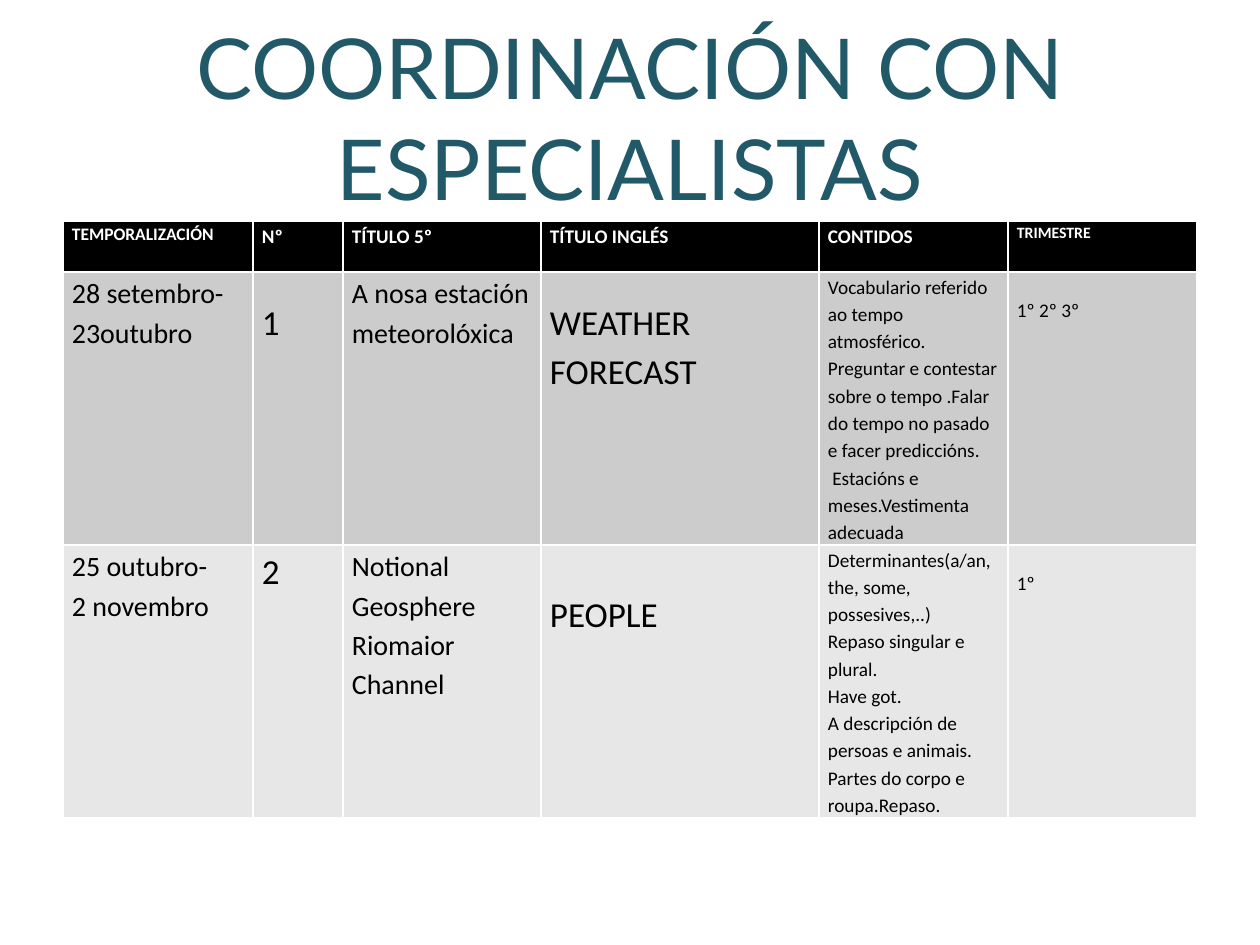
"""Build the slide on coordination with specialist teachers."""
from pptx import Presentation
from pptx.dml.color import RGBColor
from pptx.enum.text import MSO_ANCHOR, MSO_AUTO_SIZE, PP_ALIGN
from pptx.util import Emu, Pt

MIDDLE = MSO_ANCHOR.MIDDLE
FIXED = MSO_AUTO_SIZE.NONE
LEFT, CENTER = PP_ALIGN.LEFT, PP_ALIGN.CENTER
COLORS = {"title": "215968", "head": "000000", "white": "FFFFFF",
          "ink": "000000", "dark": "CCCCCC", "light": "E7E7E7"}


def px(n):
    return Emu(round(n * 914400 / 126))


def write(frame, text, size=11, color="ink", font="Calibri", bold=False,
          align=LEFT, space=1.15):
    for i, line in enumerate(text.split("\n")):
        para = frame.paragraphs[0] if i == 0 else frame.add_paragraph()
        para.alignment = align
        para.line_spacing = space
        run = para.add_run()
        run.text = line
        run.font.size = Pt(size)
        run.font.name = font
        run.font.bold = bold
        run.font.color.rgb = RGBColor.from_string(COLORS[color])


deck = Presentation()
deck.slide_width, deck.slide_height = px(1260), px(945)
slide = deck.slides.add_slide(deck.slide_layouts[5])

title = slide.shapes.title
title.left, title.top, title.width, title.height = px(63), px(38), px(1134), px(157)
frame = title.text_frame
frame.word_wrap = True
frame.auto_size = FIXED
frame.vertical_anchor = MIDDLE
write(frame, "COORDINACIÓN CON ESPECIALISTAS", size=48, color="title",
      font="Lato", align=CENTER, space=1.0)

widths = [190, 90, 198, 278, 189, 189]
heights = [51, 273, 273]
fills = ["head", "dark", "light"]
rows = [
    [("TEMPORALIZACIÓN", 10, 0), ("Nº", 11, 0), ("TÍTULO 5º", 11, 0),
     ("TÍTULO INGLÉS", 11, 0), ("CONTIDOS", 11, 0), ("TRIMESTRE", 9, 0)],
    [("28 setembro- 23outubro", 16, 0), ("1", 20, 24),
     ("A nosa estación meteorolóxica", 16, 0), ("WEATHER FORECAST", 20, 24),
     ("Vocabulario referido ao tempo atmosférico.\n"
      "Preguntar e contestar sobre o tempo .Falar do tempo no pasado "
      "e facer prediccións.\n"
      " Estacións e meses.Vestimenta adecuada", 11, 0),
     ("1º 2º 3º", 11, 24)],
    [("25 outubro-\n2 novembro", 16, 0), ("2", 20, 0),
     ("Notional Geosphere Riomaior Channel", 16, 0), ("PEOPLE", 20, 43),
     ("Determinantes(a/an, the, some, possesives,..)\n"
      "Repaso singular e plural.\nHave got.\n"
      "A descripción de persoas e animais.\n"
      "Partes do corpo e roupa.Repaso.", 11, 0),
     ("1º", 11, 24)],
]

table = slide.shapes.add_table(len(rows), len(widths), px(63), px(221),
                               px(sum(widths)), px(sum(heights))).table
for col, width in zip(table.columns, widths):
    col.width = px(width)
for r, (cells, height, fill) in enumerate(zip(rows, heights, fills)):
    table.rows[r].height = px(height)
    head = r == 0
    for c, (text, size, top) in enumerate(cells):
        cell = table.cell(r, c)
        cell.fill.solid()
        cell.fill.fore_color.rgb = RGBColor.from_string(COLORS[fill])
        cell.margin_left = cell.margin_right = px(9)
        cell.margin_top, cell.margin_bottom = px(top), 0
        write(cell.text_frame, text, size=size, bold=head,
              color="white" if head else "ink")

deck.save("out.pptx")
